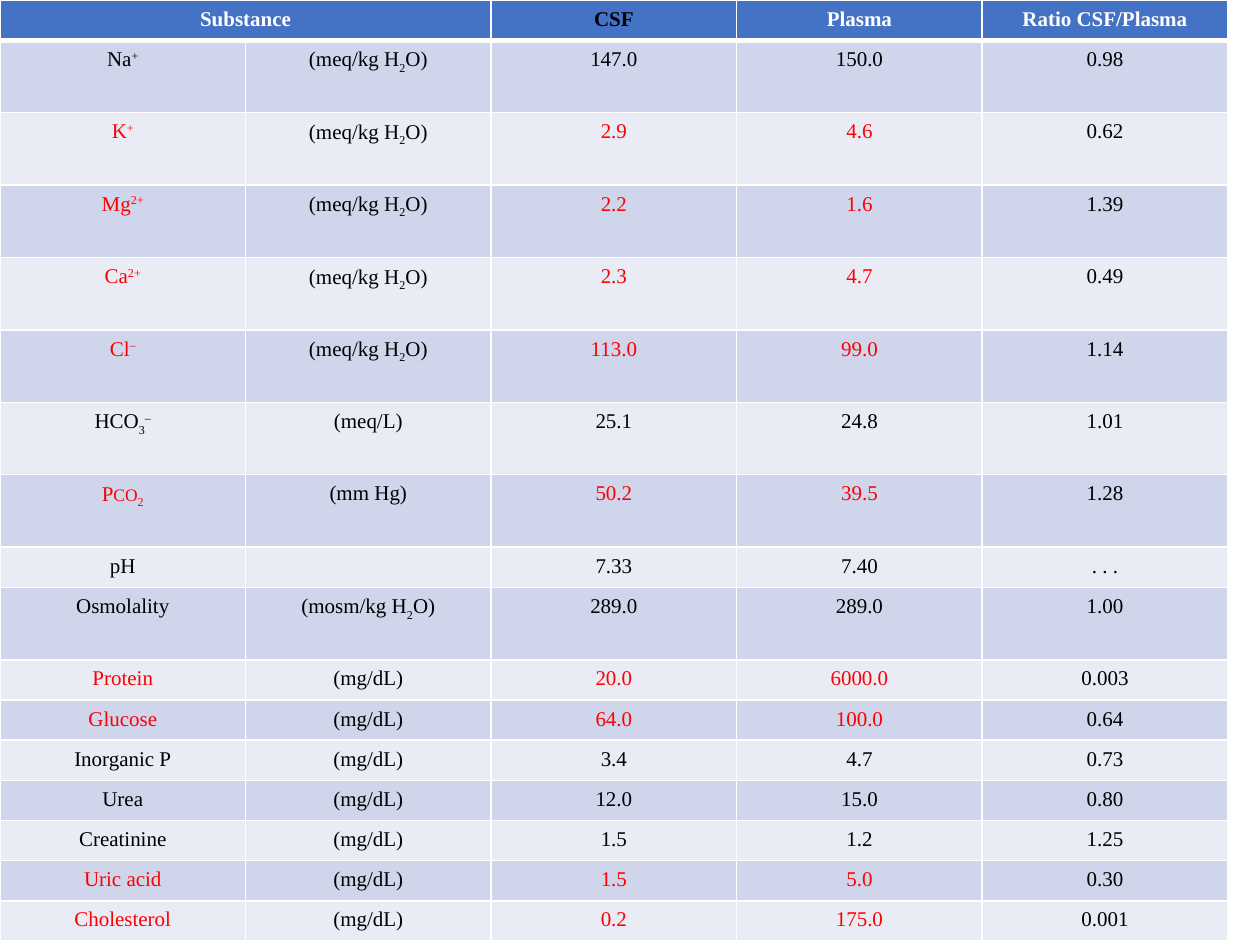
from pptx import Presentation
from pptx.dml.color import RGBColor
from pptx.enum.text import PP_ALIGN as Align
from pptx.oxml import parse_xml
from pptx.oxml.ns import nsdecls
from pptx.util import Cm, Pt

HEADINGS = ["Substance", "", "CSF", "Plasma", "Ratio CSF/Plasma"]
WATER = "(meq/kg H|_2|O)"
MASS = "(mg/dL)"
TALL, SHORT = 1.46, 0.81

# Run marks: | starts a new run, ^ raises it, _ lowers it, ~ makes it smaller.
# Columns: substance, unit, CSF, plasma, ratio, row height, highlighted
ROWS = [
    ("Na|^+", WATER, "147.0", "150.0", "0.98", TALL, False),
    ("K|^+", WATER, "2.9", "4.6", "0.62", TALL, True),
    ("Mg|^2+", WATER, "2.2", "1.6", "1.39", TALL, True),
    ("Ca|^2+", WATER, "2.3", "4.7", "0.49", TALL, True),
    ("Cl|^–", WATER, "113.0", "99.0", "1.14", TALL, True),
    ("HCO|_3|^–", "(meq/L)", "25.1", "24.8", "1.01", TALL, False),
    ("P|~CO|_2", "(mm Hg)", "50.2", "39.5", "1.28", TALL, True),
    ("pH", "", "7.33", "7.40", ". . .", SHORT, False),
    ("Osmolality", "(mosm/kg H|_2|O)", "289.0", "289.0", "1.00", TALL, False),
    ("Protein", MASS, "20.0", "6000.0", "0.003", SHORT, True),
    ("Glucose", MASS, "64.0", "100.0", "0.64", SHORT, True),
    ("Inorganic P", MASS, "3.4", "4.7", "0.73", SHORT, False),
    ("Urea", MASS, "12.0", "15.0", "0.80", SHORT, False),
    ("Creatinine", MASS, "1.5", "1.2", "1.25", SHORT, False),
    ("Uric acid", MASS, "1.5", "5.0", "0.30", SHORT, True),
    ("Cholesterol", MASS, "0.2", "175.0", "0.001", SHORT, True),
]


def color(hex_string):
    return RGBColor.from_string(hex_string)


def write(paragraph, text, font="Times New Roman", size=12, fill="000000", bold=False):
    """Write marked-up text as centred runs."""
    paragraph.alignment = Align.CENTER
    paragraph.line_spacing = 1.15
    if not text:
        paragraph._p.append(parse_xml(f'<a:endParaRPr {nsdecls("a")} sz="{size * 100}"/>'))
        return
    baselines = {"^": "30000", "_": "-25000"}
    for piece in text.split("|"):
        mark = piece[0] if piece[0] in "^_~" else ""
        run = paragraph.add_run()
        run.text = piece[len(mark):]
        run.font.name = font
        run.font.size = Pt(size - 2 if mark == "~" else size)
        run.font.bold = bold
        run.font.color.rgb = color(fill)
        if mark in baselines:
            run._r.get_or_add_rPr().set("baseline", baselines[mark])


class SlideBuilder:
    header = "4472C4"
    bands = ("CFD5EA", "E9EBF5")
    white, black, ink, red = "FFFFFF", "000000", "000204", "FF0000"
    margin = Cm(0.08)

    def __init__(self, slide):
        self.slide = slide

    def borders(self, cell, bottom=1):
        properties = cell._tc.get_or_add_tcPr()
        for side, width in (("L", 1), ("R", 1), ("T", 1), ("B", bottom)):
            properties.append(parse_xml(
                f'<a:ln{side} {nsdecls("a")} w="{Pt(width)}"><a:solidFill>'
                f'<a:srgbClr val="{self.white}"/></a:solidFill></a:ln{side}>'))

    def cell(self, cell, text, background, bottom=1, **text_format):
        cell.margin_left = cell.margin_right = self.margin
        cell.margin_top = cell.margin_bottom = self.margin
        self.borders(cell, bottom)
        cell.fill.solid()
        cell.fill.fore_color.rgb = color(background)
        write(cell.text_frame.paragraphs[0], text, **text_format)

    def table(self, headings, rows, column_width):
        heights = [SHORT] + [row[5] for row in rows]
        frame = self.slide.shapes.add_table(
            len(heights), len(headings), Cm(0), Cm(0),
            Cm(column_width * len(headings)), Cm(sum(heights)))
        table = frame.table
        table.first_row = table.horz_banding = False
        for column in table.columns:
            column.width = Cm(column_width)
        for row, height in zip(table.rows, heights):
            row.height = Cm(height)

        for index, heading in enumerate(headings):
            fill = self.ink if heading == "CSF" else self.white
            self.cell(table.cell(0, index), heading, self.header, bottom=3,
                      fill=fill, bold=True)
        table.cell(0, 0).merge(table.cell(0, 1))

        for number, (*texts, _, highlighted) in enumerate(rows, start=1):
            fills = [self.black, self.black, self.ink, self.black, self.black]
            if highlighted:
                fills[0] = fills[2] = fills[3] = self.red
            for index, (text, fill) in enumerate(zip(texts, fills)):
                self.cell(table.cell(number, index), text,
                          self.bands[(number - 1) % 2], fill=fill)


def main():
    presentation = Presentation()
    presentation.slide_width, presentation.slide_height = Cm(25.4), Cm(19.05)
    slide = presentation.slides.add_slide(presentation.slide_layouts[6])
    SlideBuilder(slide).table(HEADINGS, ROWS, column_width=4.95)
    presentation.save("out.pptx")


if __name__ == "__main__":
    main()
